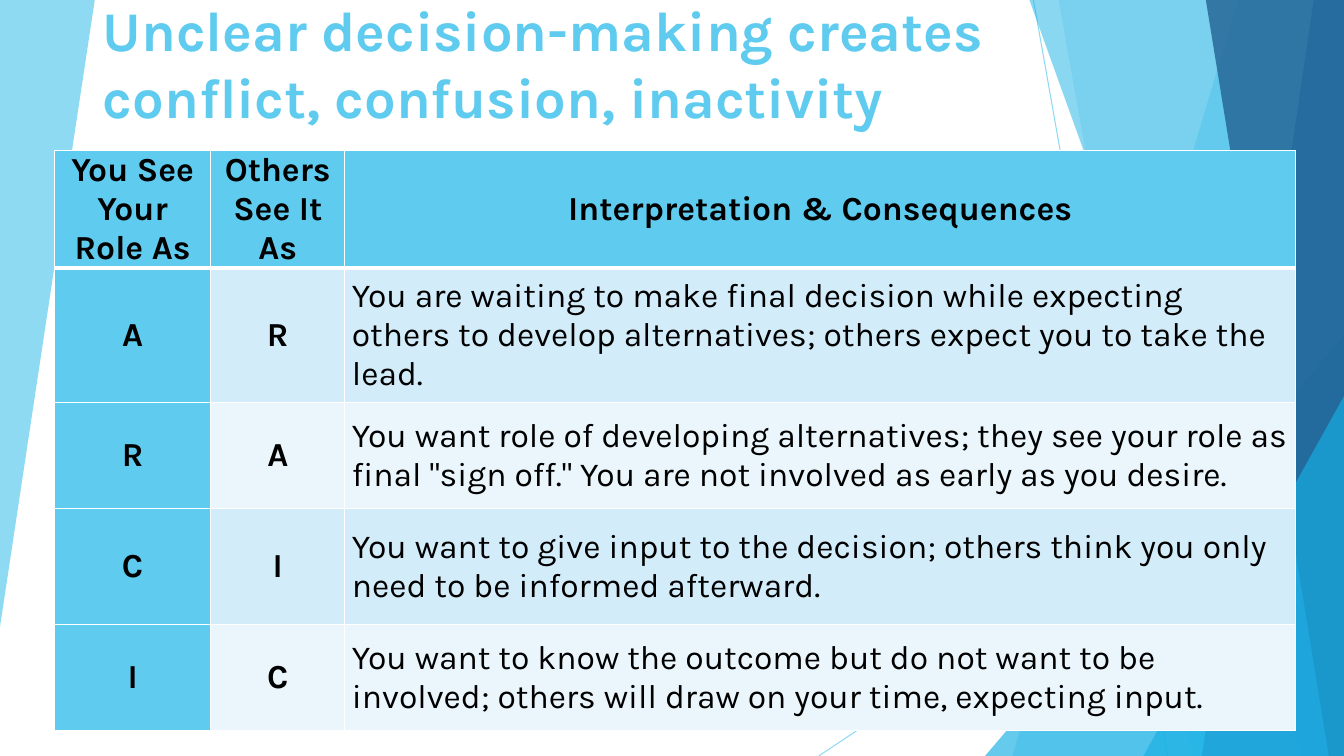
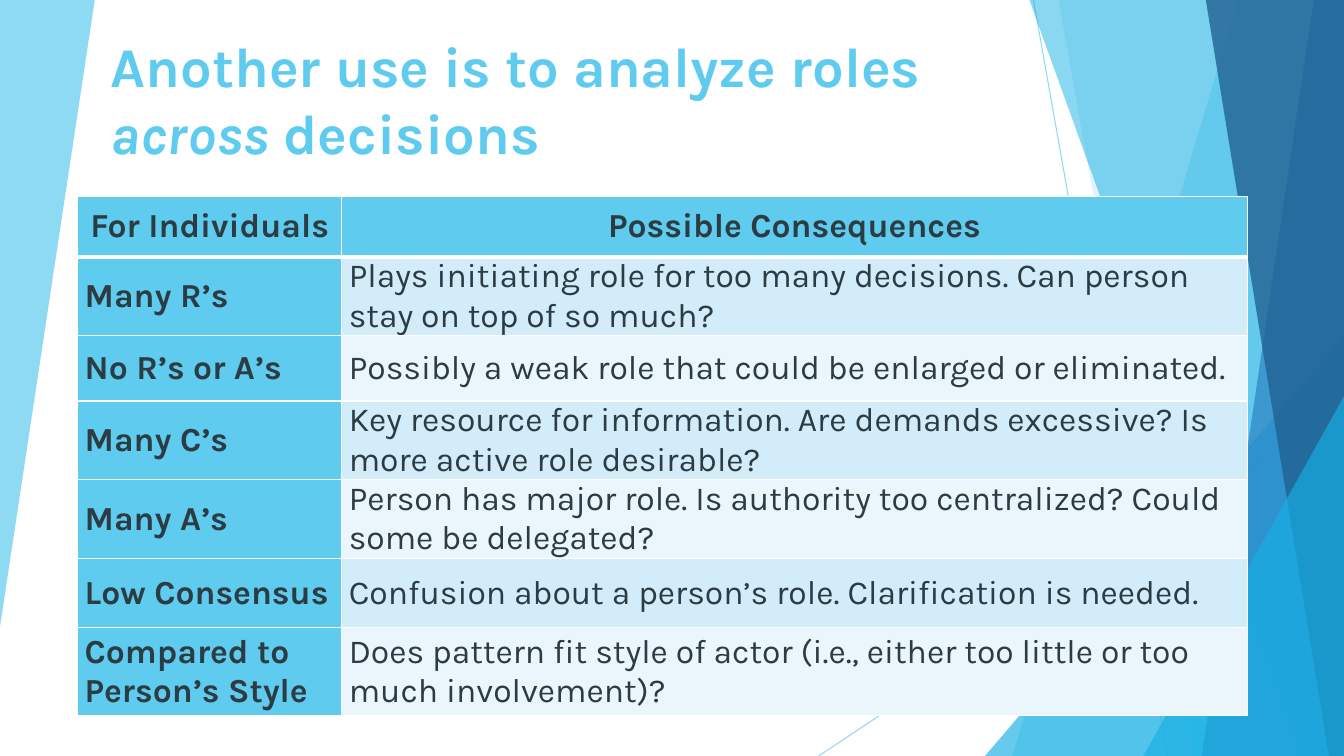
"""Build two slides on unclear decision roles, each a title over a banded table."""
import pptx
import pptx.dml.color
import pptx.enum.shapes
import pptx.enum.text
import pptx.oxml
import pptx.oxml.ns
import pptx.util

Inches, Pt = pptx.util.Inches, pptx.util.Pt
RGB = pptx.dml.color.RGBColor
ALIGN = pptx.enum.text.PP_ALIGN
MIDDLE = pptx.enum.text.MSO_ANCHOR.MIDDLE

W, H = 13.33, 7.5
FONT = "Karla"
SKY = RGB(0x5F, 0xCB, 0xEF)
CYAN = RGB(0x17, 0xB0, 0xE4)
BLUE = RGB(0x2E, 0x83, 0xC3)
NAVY = RGB(0x22, 0x62, 0x92)
BAND_DARK = RGB(0xD2, 0xEC, 0xF9)
BAND_LIGHT = RGB(0xEA, 0xF6, 0xFC)
WHITE = RGB(0xFF, 0xFF, 0xFF)
BLACK = RGB(0, 0, 0)
SLATE = RGB(0x2C, 0x3C, 0x43)

LINES = [((10.25, 0), (11.58, H)), ((W, 4.03), (8.12, H))]
FACETS = [
    ([(0, 0), (0.94, 0), (0, 6.22)], SKY, 70),
    ([(12.28, 0), (W, 0), (W, H), (10.04, H)], SKY, 36),
    ([(10.5, 0), (W, 0), (W, H), (11.83, H)], SKY, 20),
    ((9.77, 3.33), CYAN, 66),
    ([(10.21, 0), (W, 0), (W, H), (12.91, H)], CYAN, 50),
    ([(13.03, 0), (W, 0), (W, H), (11.92, H)], BLUE, 70),
    ([(11.96, 0), (W, 0), (W, H), (13.18, H)], NAVY, 80),
    ((11.34, 3.93), CYAN, 66),
]

SLIDES = [
    {
        "title": [("Unclear decision-making creates conflict, confusion, inactivity", False)],
        "title_box": (0.95, 0, 10.48, 1.25),
        "table_at": (0.54, 1.49),
        "cols": [1.55, 1.33, 9.43],
        "rows": [1.16, 1.34, 1.05, 1.15, 1.05],
        "ink": BLACK,
        "centred_cols": 2,
        "cells": [
            ("You See Your Role As", "Others See It As", "Interpretation & Consequences"),
            ("A", "R", "You are waiting to make final decision while expecting others to "
             "develop alternatives; others expect you to take the lead."),
            ("R", "A", "You want role of developing alternatives; they see your role as "
             "final \"sign off.\" You are not involved as early as you desire."),
            ("C", "I", "You want to give input to the decision; others think you only "
             "need to be informed afterward."),
            ("I", "C", "You want to know the outcome but do not want to be involved; "
             "others will draw on your time, expecting input."),
        ],
    },
    {
        "title": [("Another use is to analyze roles ", False), ("across", True),
                  (" decisions", False)],
        "title_box": (1.03, 0.35, 8.19, 1.25),
        "table_at": (0.77, 1.95),
        "cols": [2.62, 8.98],
        "rows": [0.6, 0.77, 0.65, 0.78, 0.78, 0.69, 0.87],
        "ink": SLATE,
        "centred_cols": 0,
        "cells": [
            ("For Individuals", "Possible Consequences"),
            ("Many R’s", "Plays initiating role for too many decisions. Can person stay "
             "on top of so much?"),
            ("No R’s or A’s", "Possibly a weak role that could be enlarged or eliminated."),
            ("Many C’s", "Key resource for information. Are demands excessive? Is more "
             "active role desirable?"),
            ("Many A’s", "Person has major role. Is authority too centralized? Could "
             "some be delegated?"),
            ("Low Consensus", "Confusion about a person’s role. Clarification is needed."),
            ("Compared to Person’s Style", "Does pattern fit style of actor (i.e., either "
             "too little or too much involvement)?"),
        ],
    },
]


def sub(parent, tag, **attrs):
    el = pptx.oxml.parse_xml(f"<{tag} {pptx.oxml.ns.nsdecls('a')}/>")
    for name, value in attrs.items():
        el.set(name, str(value))
    parent.append(el)
    return el


def set_alpha(sp, percent):
    for color in sp._element.spPr.iter(pptx.oxml.ns.qn("a:srgbClr")):
        sub(color, "a:alpha", val=percent * 1000)


def add_facets(s):
    for start, end in LINES:
        ln = s.shapes.add_connector(pptx.enum.shapes.MSO_CONNECTOR.STRAIGHT,
                                    *map(Inches, start + end))
        ln.line.color.rgb = SKY
        ln.line.width = Pt(0.75)
        set_alpha(ln, 70)
        sub(ln._element.spPr, "a:effectLst")
    for outline, color, alpha in FACETS:
        if isinstance(outline, tuple):
            x, y = outline
            sp = s.shapes.add_shape(pptx.enum.shapes.MSO_SHAPE.ISOSCELES_TRIANGLE,
                                    *map(Inches, (x, y, W - x, H - y)))
            sp.adjustments[0] = 1
        else:
            points = [(Inches(x), Inches(y)) for x, y in outline]
            builder = s.shapes.build_freeform(*points[0])
            builder.add_line_segments(points[1:], close=True)
            sp = builder.convert_to_shape()
        sp.shadow.inherit = False
        sp.fill.solid()
        sp.fill.fore_color.rgb = color
        sp.line.fill.background()
        set_alpha(sp, alpha)


def add_run(p, text, size, color, bold, italic=False):
    r = p.add_run()
    r.text = text
    f = r.font
    f.name, f.size, f.bold, f.italic = FONT, Pt(size), bold, italic
    f.color.rgb = color


def set_title(s, runs, box):
    sp = s.shapes.title
    s.shapes._spTree.append(sp._element)
    sp.left, sp.top, sp.width, sp.height = map(Inches, box)
    tf = sp.text_frame
    tf.word_wrap = True
    tf.auto_size = pptx.enum.text.MSO_AUTO_SIZE.NONE
    tf.vertical_anchor = MIDDLE
    tf.margin_left = tf.margin_right = Inches(0.07)
    tf.margin_top = tf.margin_bottom = Inches(0.04)
    p = tf.paragraphs[0]
    p.alignment = ALIGN.LEFT
    p.space_after = Pt(6)
    for text, italic in runs:
        add_run(p, text, 40, SKY, True, italic)


def set_borders(cell, row):
    widths = {"L": 1, "R": 1, "T": 3 if row == 1 else 1, "B": 3 if row == 0 else 1}
    for side, width in widths.items():
        ln = sub(cell._tc.get_or_add_tcPr(), f"a:ln{side}", w=Pt(width))
        sub(sub(ln, "a:solidFill"), "a:srgbClr", val=WHITE)


def add_role_table(s, d):
    cols, rows = d["cols"], d["rows"]
    frame = s.shapes.add_table(len(rows), len(cols), *map(
        Inches, d["table_at"] + (sum(cols), sum(rows))))
    table = frame.table
    table.horz_banding = False
    for column, width in zip(table.columns, cols):
        column.width = Inches(width)
    for row, height in zip(table.rows, rows):
        row.height = Inches(height)
    for i, texts in enumerate(d["cells"]):
        for j, text in enumerate(texts):
            cell = table.cell(i, j)
            set_borders(cell, i)
            cell.fill.solid()
            band = BAND_DARK if i % 2 else BAND_LIGHT
            cell.fill.fore_color.rgb = SKY if i == 0 or j == 0 else band
            cell.vertical_anchor = MIDDLE
            cell.margin_left = cell.margin_right = Inches(0.07)
            cell.margin_top = cell.margin_bottom = 0
            p = cell.text_frame.paragraphs[0]
            centred = i == 0 or j < d["centred_cols"]
            p.alignment = ALIGN.CENTER if centred else ALIGN.LEFT
            add_run(p, text, 24, d["ink"], i == 0 or j < len(cols) - 1)


def main():
    prs = pptx.Presentation()
    prs.slide_width, prs.slide_height = Inches(W), Inches(H)
    for d in SLIDES:
        s = prs.slides.add_slide(prs.slide_layouts[5])
        add_facets(s)
        set_title(s, d["title"], d["title_box"])
        add_role_table(s, d)
    prs.save("out.pptx")


if __name__ == "__main__":
    main()
